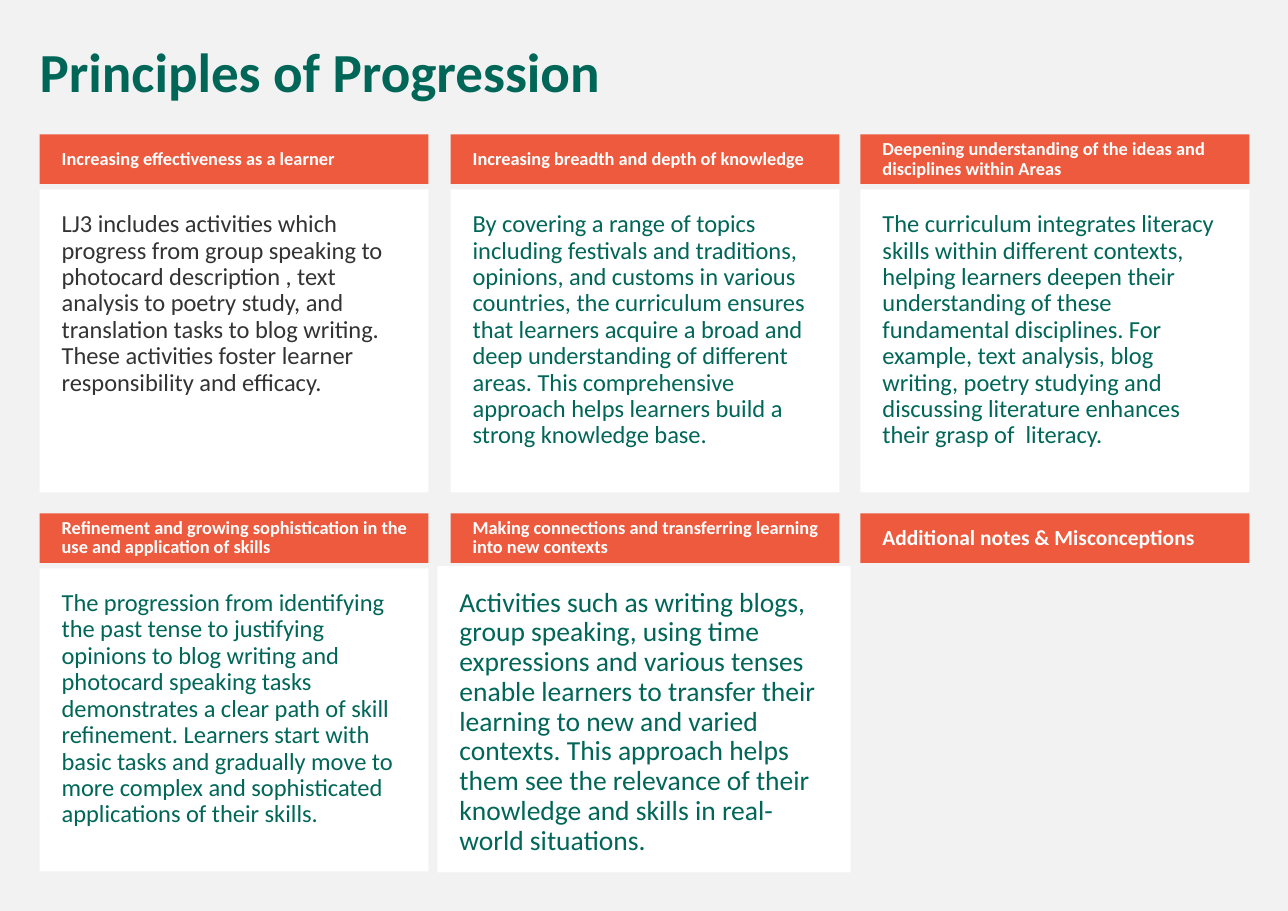
from pptx import Presentation
from pptx.dml.color import RGBColor
from pptx.enum.shapes import MSO_SHAPE
from pptx.enum.text import MSO_ANCHOR, MSO_AUTO_SIZE, PP_ALIGN
from pptx.util import Inches, Pt

RECTANGLE = MSO_SHAPE.RECTANGLE
TOP, MIDDLE = MSO_ANCHOR.TOP, MSO_ANCHOR.MIDDLE
NO_AUTOFIT = MSO_AUTO_SIZE.NONE
LEFT = PP_ALIGN.LEFT

GREY = RGBColor(0xF2, 0xF2, 0xF2)
WHITE = RGBColor(0xFF, 0xFF, 0xFF)
ORANGE = RGBColor(0xED, 0x5A, 0x3E)
GREEN = RGBColor(0x00, 0x67, 0x58)
CHARCOAL = RGBColor(0x33, 0x33, 0x33)

# Grid in inches: three columns, two rows
COLUMN_LEFTS = (0.36, 4.09, 7.81)
ROW_TOPS = (1.22, 4.66)
CARD_WIDTH = 3.53
HEADER_HEIGHT = 0.45
BODY_OFFSET = 0.5
BODY_HEIGHT = 2.75
HEADER_INSETS = (0.2, 0.05, 0.1, 0.05)
BODY_INSETS = (0.2, 0.2, 0.2, 0.2)


def write_text(shape, text, *, size, color, bold=False, anchor=TOP,
               insets=(0.1, 0.05, 0.1, 0.05)):
    frame = shape.text_frame
    frame.word_wrap = True
    frame.auto_size = NO_AUTOFIT
    frame.vertical_anchor = anchor
    (frame.margin_left, frame.margin_top,
     frame.margin_right, frame.margin_bottom) = map(Inches, insets)
    paragraph = frame.paragraphs[0]
    paragraph.alignment = LEFT
    paragraph.line_spacing = 0.9
    paragraph.space_before = Pt(11)
    run = paragraph.add_run()
    run.text = text
    run.font.name = "Calibri"
    run.font.size = Pt(size)
    run.font.bold = bold
    run.font.color.rgb = color


def add_panel(slide, box, fill):
    shape = slide.shapes.add_shape(RECTANGLE, *map(Inches, box))
    shape.shadow.inherit = False
    shape.fill.solid()
    shape.fill.fore_color.rgb = fill
    shape.line.fill.background()
    return shape


presentation = Presentation()
presentation.slide_width = Inches(11.69)
presentation.slide_height = Inches(8.27)
slide = presentation.slides.add_slide(presentation.slide_layouts.get_by_name("Title Only"))
slide.background.fill.solid()
slide.background.fill.fore_color.rgb = GREY

# Title
title = slide.shapes.title
title.left, title.top, title.width, title.height = map(Inches, (0.26, 0.36, 11.08, 0.65))
write_text(title, "Principles of Progression", size=36, color=GREEN, bold=True)

# Cards in reading order: header, header size, body, body size, body colour
cards = [
    ("Increasing effectiveness as a learner", 12,
     "LJ3 includes activities which progress from group speaking to photocard "
     "description , text analysis to poetry study, and translation tasks to blog "
     "writing. These activities foster learner responsibility and efficacy.",
     16, CHARCOAL),
    ("Increasing breadth and depth of knowledge", 12,
     "By covering a range of topics including festivals and traditions, opinions, "
     "and customs in various countries, the curriculum ensures that learners "
     "acquire a broad and deep understanding of different areas. This "
     "comprehensive approach helps learners build a strong knowledge base.",
     16, GREEN),
    ("Deepening understanding of the ideas and disciplines within Areas", 12,
     "The curriculum integrates literacy skills within different contexts, helping "
     "learners deepen their understanding of these fundamental disciplines. For "
     "example, text analysis, blog writing, poetry studying and discussing "
     "literature enhances their grasp of  literacy.",
     16, GREEN),
    ("Refinement and growing sophistication in the use and application of skills", 12,
     "The progression from identifying the past tense to justifying opinions to "
     "blog writing and photocard speaking tasks demonstrates a clear path of skill "
     "refinement. Learners start with basic tasks and gradually move to more "
     "complex and sophisticated applications of their skills.",
     16, GREEN),
    ("Making connections and transferring learning into new contexts", 12,
     "Activities such as writing blogs, group speaking, using time expressions "
     "and various tenses enable learners to transfer their learning to new and "
     "varied contexts. This approach helps them see the relevance of their "
     "knowledge and skills in real-world situations.",
     18, GREEN),
    ("Additional notes & Misconceptions", 14, None, None, None),
]
# The connections card has a larger body
WIDE_BODIES = {4: (3.97, 5.14, 3.75, 2.78)}

for index, (header_text, header_size, body_text, body_size, body_color) in enumerate(cards):
    row, column = divmod(index, len(COLUMN_LEFTS))
    left, top = COLUMN_LEFTS[column], ROW_TOPS[row]

    if body_text:
        body_box = WIDE_BODIES.get(index, (left, top + BODY_OFFSET, CARD_WIDTH, BODY_HEIGHT))
        body = add_panel(slide, body_box, WHITE)
        write_text(body, body_text, size=body_size, color=body_color, insets=BODY_INSETS)

    header = add_panel(slide, (left, top, CARD_WIDTH, HEADER_HEIGHT), ORANGE)
    write_text(header, header_text, size=header_size, color=WHITE, bold=True,
               anchor=MIDDLE, insets=HEADER_INSETS)

presentation.save("out.pptx")
